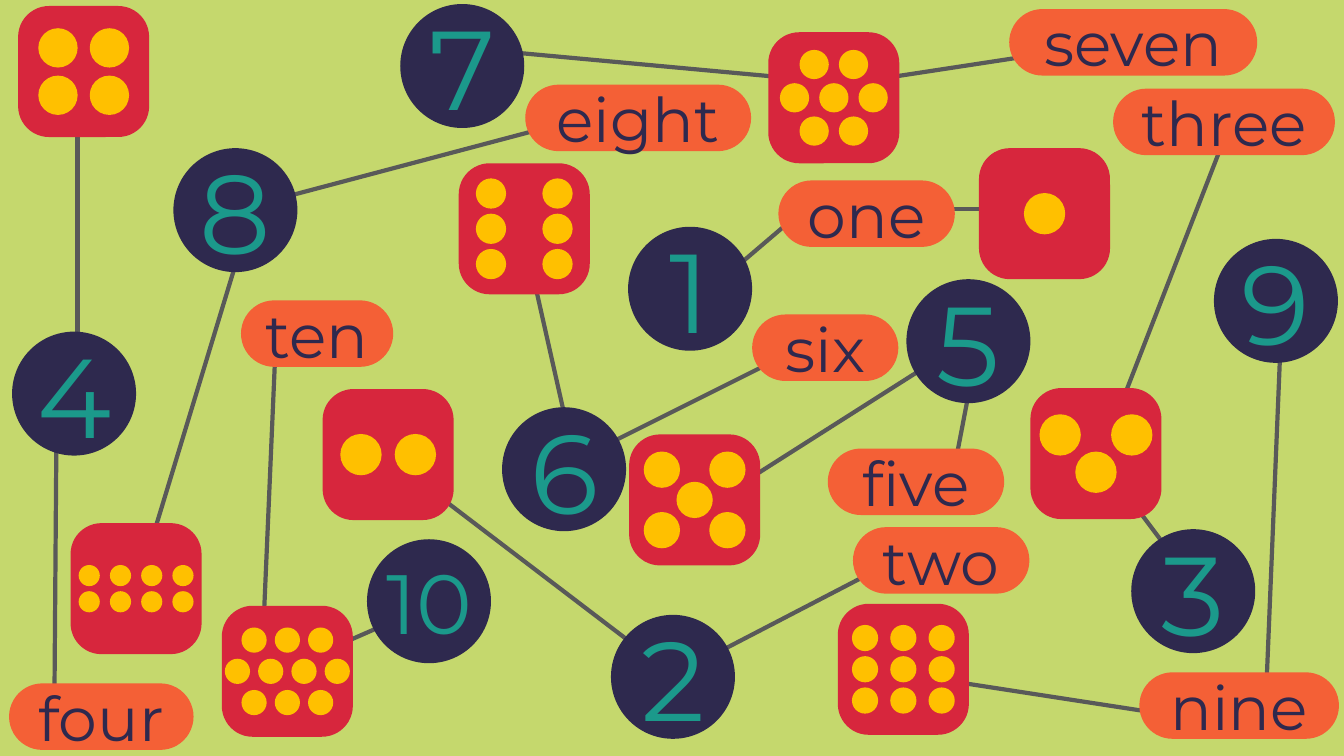
from dataclasses import dataclass

from lxml import etree
from pptx import Presentation
from pptx.dml.color import RGBColor
from pptx.enum.shapes import MSO_CONNECTOR, MSO_SHAPE
from pptx.enum.text import MSO_ANCHOR, PP_ALIGN
from pptx.oxml.ns import qn
from pptx.util import Inches, Pt

ELLIPSE = MSO_SHAPE.OVAL
ROUNDED = MSO_SHAPE.ROUNDED_RECTANGLE
STRAIGHT = MSO_CONNECTOR.STRAIGHT
MIDDLE = MSO_ANCHOR.MIDDLE
CENTER = PP_ALIGN.CENTER
BLANK_LAYOUT = 6


@dataclass(frozen=True)
class Theme:
    background: str = "C5D86D"
    line: str = "595959"
    die: str = "D7263D"
    pip: str = "FFC000"
    navy: str = "2E294E"
    digit: str = "1B998B"
    pill: str = "F46036"
    font: str = "Montserrat"
    digit_size: int = 80
    two_digit_size: int = 60
    word_size: int = 44
    line_width: int = 3


@dataclass(frozen=True)
class NumberSet:
    """One number as digit, dice and word, with the lines that join them."""
    value: int
    word: str
    circle: tuple
    die: tuple
    pill: tuple  # left, top, width
    lines: tuple


THEME = Theme()
CIRCLE_SIZE = 1.23
DIE_SIZE = 1.3
PILL_HEIGHT = 0.66

# value: pip size, pips in each row, column step, row step
PIPS = {
    1: (0.41, (1,), 0, 0),
    2: (0.41, (2,), 0.54, 0),
    3: (0.41, (2, 1), 0.71, 0.37),
    4: (0.39, (2, 2), 0.51, 0.47),
    5: (0.36, (2, 1, 2), 0.65, 0.3),
    6: (0.3, (2, 2, 2), 0.66, 0.35),
    7: (0.29, (2, 3, 2), 0.39, 0.33),
    8: (0.21, (4, 4), 0.31, 0.26),
    9: (0.26, (3, 3, 3), 0.38, 0.31),
    10: (0.25, (3, 4, 3), 0.33, 0.31),
}

NUMBERS = (
    NumberSet(1, "one", (6.23, 2.25), (9.71, 1.47), (7.72, 1.79, 1.75),
              ((9.21, 2.07, 9.87, 2.07), (7.9, 2.14, 7.29, 2.66))),
    NumberSet(2, "two", (6.06, 6.1), (3.2, 3.86), (8.46, 5.23, 1.75),
              ((3.97, 4.63, 6.37, 6.46), (8.8, 5.6, 6.74, 6.67))),
    NumberSet(3, "three", (11.22, 5.25), (10.22, 3.85), (11.04, 0.88, 2.2),
              ((11.86, 5.82, 11.08, 4.78), (12.18, 1.28, 11.01, 4.29))),
    NumberSet(4, "four", (0.12, 3.29), (0.18, 0.06), (0.09, 6.78, 1.83),
              ((0.77, 1.16, 0.77, 3.29), (0.54, 6.95, 0.56, 4.29))),
    NumberSet(5, "five", (8.99, 2.77), (6.24, 4.31), (8.21, 4.45, 1.75),
              ((9.21, 3.62, 7.29, 4.84), (9.62, 3.84, 9.47, 4.62))),
    NumberSet(6, "six", (4.98, 4.04), (4.55, 1.62), (7.46, 3.12, 1.45),
              ((5.68, 4.58, 7.72, 3.56), (5.68, 4.48, 5.27, 2.66))),
    NumberSet(7, "seven", (3.97, 0.04), (7.62, 0.32), (10.01, 0.09, 2.46),
              ((4.87, 0.5, 7.9, 0.78), (8.41, 0.83, 10.57, 0.5))),
    NumberSet(8, "eight", (1.72, 1.47), (0.7, 5.19), (5.21, 0.84, 2.24),
              ((2.55, 1.92, 1.48, 5.44), (2.39, 2.07, 5.82, 1.16))),
    NumberSet(9, "nine", (12.04, 2.37), (8.31, 5.99), (11.3, 6.67, 1.98),
              ((12.71, 3.18, 12.56, 6.83), (11.52, 7.08, 9.25, 6.73))),
    NumberSet(10, "ten", (3.64, 5.35), (2.2, 6.01), (2.39, 2.98, 1.51),
              ((2.73, 3.51, 2.59, 6.76), (4.11, 6.07, 3.22, 6.46))),
)


def add_filled(shapes, kind, left, top, width, height, color):
    shape = shapes.add_shape(
        kind, Inches(left), Inches(top), Inches(width), Inches(height))
    shape.shadow.inherit = False
    shape.fill.solid()
    shape.fill.fore_color.rgb = RGBColor.from_string(color)
    shape.line.fill.background()
    return shape


def write_text(shape, text, *, size, color, wrap=True):
    frame = shape.text_frame
    frame.word_wrap = wrap
    frame.vertical_anchor = MIDDLE
    para = frame.paragraphs[0]
    para.alignment = CENTER
    span = para.add_run()
    span.text = text
    span.font.name = THEME.font
    span.font.size = Pt(size)
    span.font.color.rgb = RGBColor.from_string(color)


def add_line(page, *ends):
    line = page.shapes.add_connector(STRAIGHT, *(Inches(end) for end in ends))
    line.line.color.rgb = RGBColor.from_string(THEME.line)
    line.line.width = Pt(THEME.line_width)
    etree.SubElement(line._element.spPr, qn("a:effectLst"))


def add_die(page, left, top, value):
    """Draw a die with its rows of pips centred on the face."""
    group = page.shapes.add_group_shape()
    face = add_filled(group.shapes, ROUNDED, left, top, DIE_SIZE, DIE_SIZE, THEME.die)
    face.adjustments[0] = 0.236
    pip, rows, column_step, row_step = PIPS[value]
    middle_left = left + (DIE_SIZE - pip) / 2
    middle_top = top + (DIE_SIZE - pip) / 2
    for row, count in enumerate(rows):
        pip_top = middle_top + (row - (len(rows) - 1) / 2) * row_step
        for column in range(count):
            pip_left = middle_left + (column - (count - 1) / 2) * column_step
            add_filled(group.shapes, ELLIPSE, pip_left, pip_top, pip, pip, THEME.pip)


def add_digit(page, left, top, value):
    """Draw a circle with the number in a text box centred over it."""
    group = page.shapes.add_group_shape()
    add_filled(group.shapes, ELLIPSE, left, top, CIRCLE_SIZE, CIRCLE_SIZE, THEME.navy)
    if value < 10:
        width, height, size = 0.95, 1.45, THEME.digit_size
    else:
        width, height, size = 1.32, 1.11, THEME.two_digit_size
    box = group.shapes.add_textbox(
        Inches(left + (CIRCLE_SIZE - width) / 2),
        Inches(top + (CIRCLE_SIZE - height) / 2),
        Inches(width), Inches(height))
    write_text(box, str(value), size=size, color=THEME.digit, wrap=False)


def add_word(page, left, top, width, word):
    pill = add_filled(page.shapes, ROUNDED, left, top, width, PILL_HEIGHT, THEME.pill)
    pill.adjustments[0] = 0.5
    write_text(pill, word, size=THEME.word_size, color=THEME.navy)


def build_matching_page(deck):
    page = deck.slides.add_slide(deck.slide_layouts[BLANK_LAYOUT])
    page.background.fill.solid()
    page.background.fill.fore_color.rgb = RGBColor.from_string(THEME.background)
    for number in NUMBERS:
        for ends in number.lines:
            add_line(page, *ends)
    for number in NUMBERS:
        add_die(page, *number.die, number.value)
        add_digit(page, *number.circle, number.value)
        add_word(page, *number.pill, number.word)


def main():
    deck = Presentation()
    deck.slide_width = Inches(13.33)
    deck.slide_height = Inches(7.5)
    build_matching_page(deck)
    deck.save("out.pptx")


if __name__ == "__main__":
    main()
